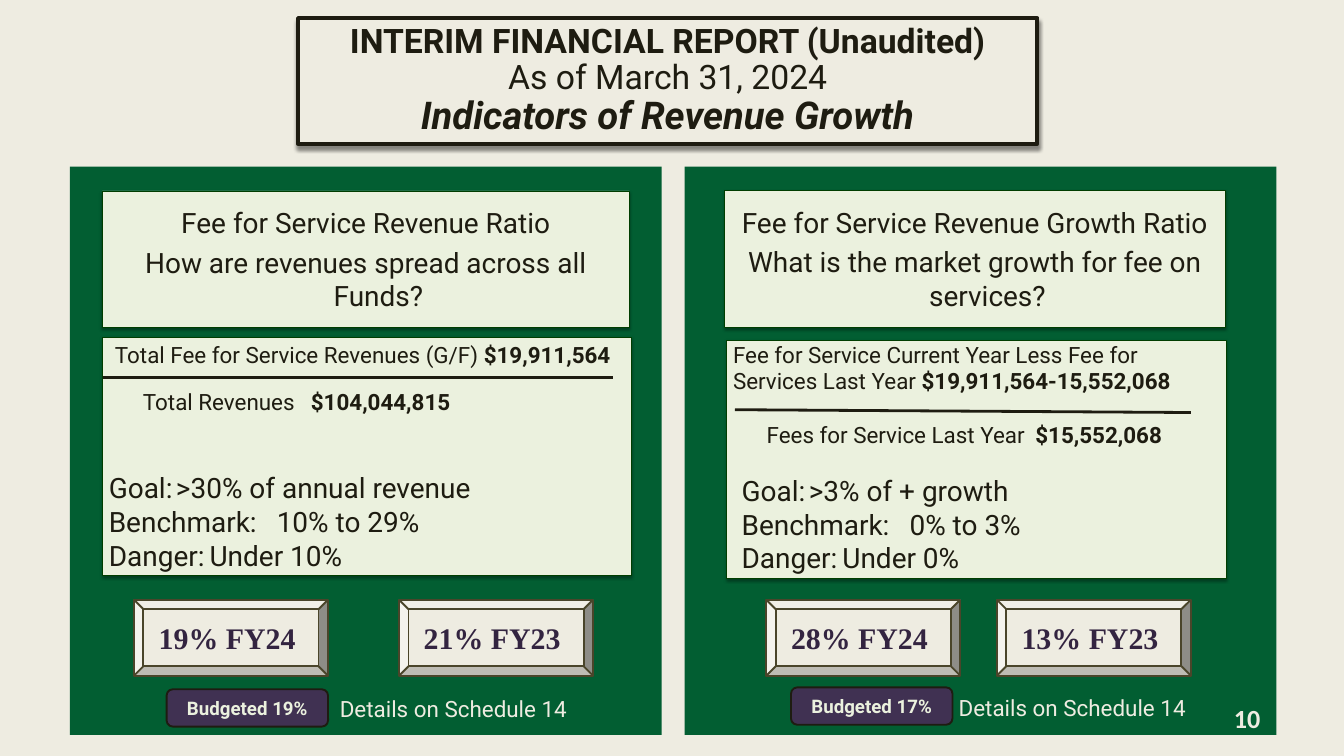
from dataclasses import dataclass, field
from typing import Any

from lxml import etree
from pptx import Presentation
from pptx.dml.color import RGBColor
from pptx.enum.shapes import MSO_CONNECTOR, MSO_SHAPE
from pptx.enum.text import MSO_ANCHOR, PP_ALIGN
from pptx.oxml.ns import qn
from pptx.util import Pt

RECT = MSO_SHAPE.RECTANGLE
ROUND = MSO_SHAPE.ROUNDED_RECTANGLE
BEVEL = MSO_SHAPE.BEVEL
LINE = MSO_CONNECTOR.STRAIGHT
LEFT, MID, RIGHT = PP_ALIGN.LEFT, PP_ALIGN.CENTER, PP_ALIGN.RIGHT
TOP, CORE = MSO_ANCHOR.TOP, MSO_ANCHOR.MIDDLE

HUES = {
    "sand": "EEECE1", "green": "025E32", "ink": "1E1C11", "mint": "EBF1DE",
    "edge": "003E00", "plum": "403152", "grape": "332440", "bark": "4A452A",
    "black": "000000",
}
BOLD = {"bold": True}
PLAIN = {"bold": False}


@dataclass
class Style:
    form: Any = None
    fill: str = ""
    edge: str = ""
    thick: float = 0
    shade: tuple = ()
    ink: str = "ink"
    font: dict = field(default_factory=dict)
    align: Any = LEFT
    hold: Any = TOP
    pads: tuple = (7.2, 3.6, 7.2, 3.6)
    pitch: float = 1


@dataclass
class Para:
    runs: list
    gap: float = 0
    left: float = 0
    hang: float = 0
    tabs: tuple = ()


@dataclass
class Box:
    style: str
    x: float
    y: float
    w: float
    h: float
    paras: list = field(default_factory=list)


@dataclass
class Rule:
    x1: float
    y1: float
    x2: float
    y2: float


def face(size: float, name: str = "Roboto", bold: bool = False) -> dict:
    return {"size": Pt(size), "name": name, "bold": bold}


CARD = {"form": RECT, "fill": "mint", "edge": "edge", "thick": 0.75,
        "shade": (35, 3.1, 1.8)}
STYLES = {
    "panel": Style(RECT, "green"),
    "title": Style(RECT, "sand", "ink", 4.5, (43, 4, 4), font=face(36.1),
                   align=MID, hold=CORE, pads=(0, 0, 0, 0), pitch=0.9),
    "head": Style(**CARD, font=face(30), align=MID, hold=CORE),
    "body": Style(**CARD, font=face(24)),
    "badge": Style(ROUND, "plum", "ink", 2, ink="mint",
                   font=face(20, bold=True), align=MID, hold=CORE),
    "note": Style(ink="sand", font=face(24)),
    "goals": Style(font=face(30)),
    "sums": Style(font=face(24), pads=(14.4, 3.6, 7.2, 3.6)),
    "page": Style(ink="sand", font=face(28, "Calibri", True), align=RIGHT,
                  pads=(0, 0, 0, 0)),
    "score": Style(BEVEL, "sand", "bark", 2, ink="grape",
                   font=face(32, "Times New Roman", True), align=MID,
                   hold=CORE, pads=(7.2, 3.6, 15.2, 3.6)),
}


def plain(text: str, **form: Any) -> list[Para]:
    return [Para([(text, {})], **form)]


def heads(top: str, ask: str) -> list[Para]:
    return plain(top, left=27, hang=-27) + plain(ask, gap=6, left=27, hang=-27)


def goals(tab: float, *marks: str) -> list[Para]:
    names = ("Goal:", "Benchmark:", "Danger:")
    return [Para([(f"{name}\t{mark}", {})], tabs=(tab,))
            for name, mark in zip(names, marks)]


TITLE = [Para([("INTERIM FINANCIAL REPORT (Unaudited)", BOLD), ("\n", {}),
               ("As of March 31, 2024", PLAIN), ("\n", {}),
               ("Indicators of Revenue Growth",
                {"size": Pt(41), "bold": True, "italic": True})])]
SHARE = [Para([("Total Fee for Service Revenues (G/F) ", {}),
               ("$19,911,564", BOLD)], left=6),
         Para([("\tTotal Revenues\t", {}), ("$104,044,815", BOLD)],
              gap=22, tabs=(83, 388))]
GROWTH = [Para([("Fee for Service Current Year Less Fee for Services Last Year ", {}),
                ("$19,911,564-15,552,068", BOLD)]),
          Para([("\tFees for Service Last Year\t", {}), ("$15,552,068", BOLD)],
               gap=28.5, tabs=(23.5, 318))]

BACK = [
    *[Box("panel", x, 178.5, 634, 609) for x in (75, 733.5)],
    Box("title", 319.5, 19.5, 792, 134.5, TITLE),
    Box("head", 109.5, 204.5, 565, 146,
        heads("Fee for Service Revenue Ratio",
              "How are revenues spread across all Funds?")),
    Box("head", 776, 204, 537, 147,
        heads("Fee for Service Revenue Growth Ratio",
              "What is the market growth for fee on services?")),
    Box("body", 110, 361.5, 566, 255, SHARE),
    Box("body", 778.5, 364.5, 535.5, 255),
]
RULES = [Rule(110, 404.5, 656.5, 404.5), Rule(787.5, 439, 1276, 442)]
FRONT = [
    Box("badge", 178.5, 738.5, 173, 40, plain("Budgeted 19%")),
    Box("badge", 847.5, 736.5, 173, 40, plain("Budgeted 17%")),
    Box("note", 357, 741.5, 279.5, 36, plain("Details on Schedule 14")),
    Box("note", 1020, 740, 276, 36, plain("Details on Schedule 14")),
    Box("goals", 109.5, 501, 565, 117,
        goals(230, ">30% of annual revenue", "10% to 29%", "Under 10%")),
    Box("goals", 787.5, 504, 508, 117,
        goals(196, ">3% of + growth", "0% to 3%", "Under 0%")),
    Box("sums", 771, 361.5, 543, 124, GROWTH),
    Box("page", 1320.5, 753, 30, 34, plain("10")),
    *[Box("score", x, 642.5, 208, 81.5, plain(text))
      for x, text in ((143.5, "19% FY24"), (427.5, "21% FY23"),
                      (821, "28% FY24"), (1068, "13% FY23"))],
]


def hue(name: str) -> RGBColor:
    return RGBColor.from_string(HUES[name])


def cast(shape: Any, shade: tuple) -> None:
    alpha, blur, drop = shade
    root = shape._element.spPr.find(qn("a:effectLst"))
    outer = etree.SubElement(root, qn("a:outerShdw"), blurRad=str(Pt(blur)),
                             dist=str(Pt(drop)), dir="5400000", rotWithShape="0")
    tint = etree.SubElement(outer, qn("a:srgbClr"), val=HUES["black"])
    etree.SubElement(tint, qn("a:alpha"), val=str(alpha * 1000))


def write(frame: Any, style: Style, paras: list[Para]) -> None:
    sides = ("margin_left", "margin_top", "margin_right", "margin_bottom")
    form = {"word_wrap": True, "vertical_anchor": style.hold,
            **dict(zip(sides, map(Pt, style.pads)))}
    for key, value in form.items():
        setattr(frame, key, value)
    for spot, para in enumerate(paras):
        line = frame.add_paragraph() if spot else frame.paragraphs[0]
        form = {"alignment": style.align, "line_spacing": style.pitch,
                "space_before": Pt(para.gap)}
        for key, value in form.items():
            setattr(line, key, value)
        props = line._p.get_or_add_pPr()
        props.set("marL", str(Pt(para.left)))
        props.set("indent", str(Pt(para.hang)))
        if para.tabs:
            stops = etree.SubElement(props, qn("a:tabLst"))
            for tab in para.tabs:
                etree.SubElement(stops, qn("a:tab"), pos=str(Pt(tab)), algn="l")
        for text, extra in para.runs:
            if text == "\n":
                line.add_line_break()
                continue
            run = line.add_run()
            run.text = text
            for key, value in {**style.font, **extra}.items():
                setattr(run.font, key, value)
            run.font.color.rgb = hue(style.ink)


def draw(slide: Any, box: Box) -> None:
    style = STYLES[box.style]
    place = [Pt(part) for part in (box.x, box.y, box.w, box.h)]
    if style.form is None:
        shape = slide.shapes.add_textbox(*place)
    else:
        shape = slide.shapes.add_shape(style.form, *place)
        shape.shadow.inherit = False
        shape.fill.solid()
        shape.fill.fore_color.rgb = hue(style.fill)
        if style.edge:
            shape.line.color.rgb = hue(style.edge)
            shape.line.width = Pt(style.thick)
        else:
            shape.line.fill.background()
        if style.shade:
            cast(shape, style.shade)
    write(shape.text_frame, style, box.paras)


def join(slide: Any, rule: Rule) -> None:
    ends = [Pt(part) for part in (rule.x1, rule.y1, rule.x2, rule.y2)]
    line = slide.shapes.add_connector(LINE, *ends)
    line.line.color.rgb = hue("ink")
    line.line.width = Pt(3)
    etree.SubElement(line._element.spPr, qn("a:effectLst"))


def main() -> None:
    deck = Presentation()
    deck.slide_width, deck.slide_height = Pt(1440), Pt(810)
    slide = deck.slides.add_slide(deck.slide_layouts[6])
    slide.background.fill.solid()
    slide.background.fill.fore_color.rgb = hue("sand")
    for box in BACK:
        draw(slide, box)
    for rule in RULES:
        join(slide, rule)
    for box in FRONT:
        draw(slide, box)
    deck.save("out.pptx")


if __name__ == "__main__":
    main()
